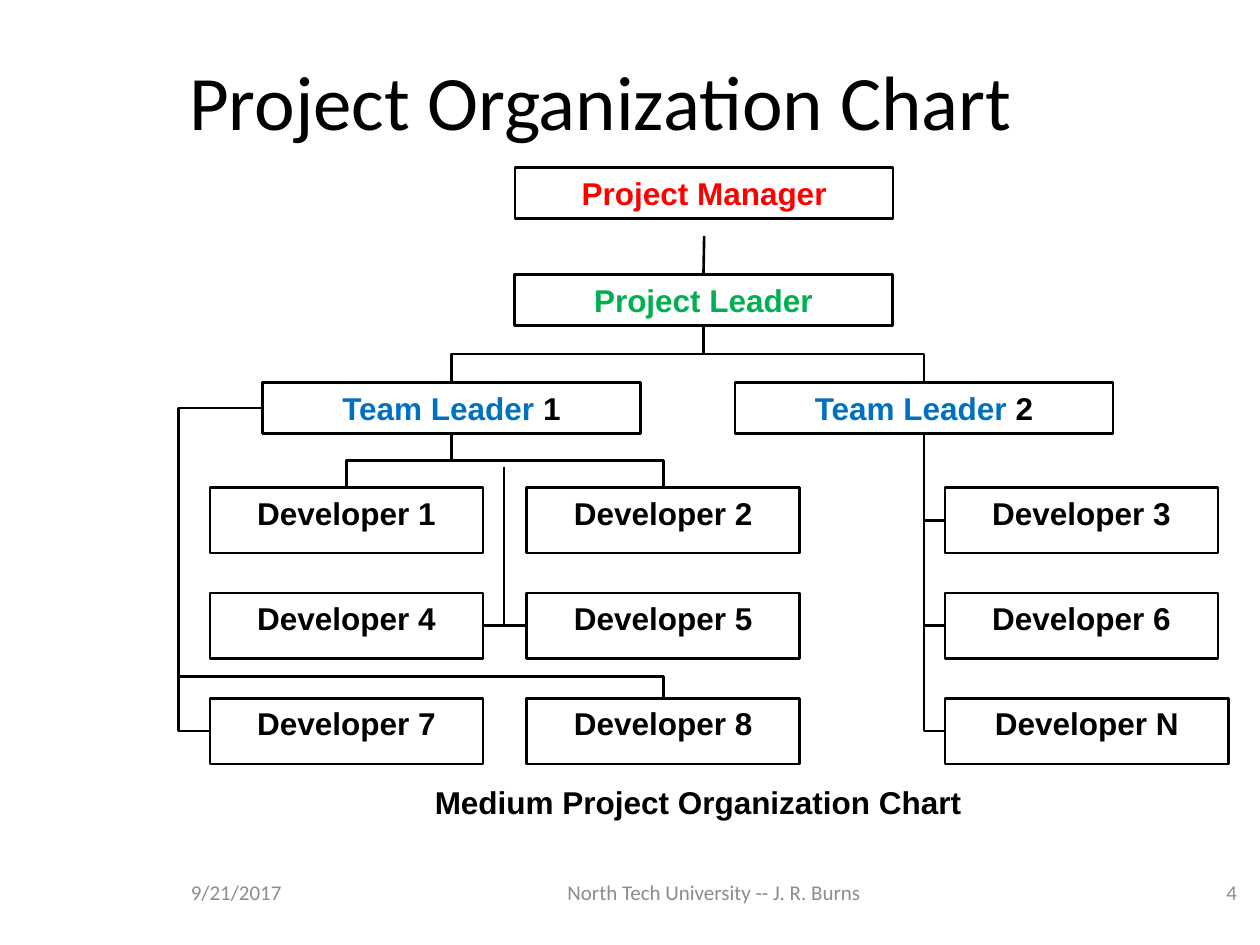
"""Build a slide with the organization chart of a medium project."""
import pptx
import pptx.chart.data
import pptx.dml.color
import pptx.enum.shapes
import pptx.enum.text
import pptx.oxml
import pptx.oxml.ns
import pptx.util
from lxml import etree

Pt = pptx.util.Pt
qn = pptx.oxml.ns.qn
Align = pptx.enum.text.PP_ALIGN
Anchor = pptx.enum.text.MSO_ANCHOR
Link = pptx.enum.shapes.MSO_CONNECTOR
Rect = pptx.enum.shapes.MSO_SHAPE.RECTANGLE
left, mid, right = Align.LEFT, Align.CENTER, Align.RIGHT
black, red, green, blue, gray = "000000", "FF0000", "00B050", "0070C0", "8C8C8C"
bold = {"name": "Arial", "size": Pt(18), "bold": True}
small = {"name": "Calibri", "size": Pt(12)}
large = {"name": "Calibri", "size": Pt(44)}

deck = pptx.Presentation()
deck.slide_width, deck.slide_height = Pt(720), Pt(540)
shapes = deck.slides.add_slide(deck.slide_layouts[6]).shapes


def color(code):
    return pptx.dml.color.RGBColor.from_string(code)


def write(shape, runs, style, align, anchor):
    frame = shape.text_frame
    frame.word_wrap = True
    frame.vertical_anchor = anchor
    para = frame.paragraphs[0]
    para.alignment = align
    for text, code in runs:
        run = para.add_run()
        run.text = text
        run.font.color.rgb = color(code)
        for key, value in style.items():
            setattr(run.font, key, value)


labels = [
    ("9/21/2017", (102, 492, 150, 36), small, gray, left, Anchor.MIDDLE),
    ("North Tech University -- J. R. Burns", (294, 492, 228, 36), small, gray, mid, Anchor.MIDDLE),
    ("4", (564, 492, 150, 36), small, gray, right, Anchor.MIDDLE),
    ("Project Organization Chart", (101, 12, 606, 90), large, black, left, Anchor.MIDDLE),
    ("Medium Project Organization Chart", (186, 444, 426, 36), bold, black, mid, Anchor.TOP),
]
for text, area, style, code, align, anchor in labels:
    label = shapes.add_textbox(*map(Pt, area))
    write(label, [(text, code)], style, align, anchor)

cols, top, step, wide, high = (120, 301, 540), 278.6, 60.2, 156, 37.5
boxes = [
    ([("Project Manager", red)], (294.4, 95.8, 216, 29)),
    ([("Project Leader", green)], (294, 157, 216, 29)),
    ([("Team Leader ", blue), ("1", black)], (150, 218.6, 216, 29)),
    ([("Team Leader ", blue), ("2", black)], (420, 218.6, 216, 29)),
]
for num in range(9):
    row, col = divmod(num, 3)
    last = num == 8
    name = "Developer N" if last else f"Developer {num + 1}"
    area = (cols[col], top + row * step, 162 if last else wide, high)
    boxes.append(([(name, black)], area))

drawn = []
for runs, area in boxes:
    box = shapes.add_shape(Rect, *map(Pt, area))
    box.shadow.inherit = False
    box.fill.background()
    box.line.color.rgb = color(black)
    box.line.width = Pt(1.5)
    write(box, runs, bold, mid, Anchor.TOP)
    drawn.append(box)

rows = [top + row * step + high / 2 for row in range(3)]
lead, one, two = (402, 186), (258, 247.6), (528, 247.6)
split = (288, 266.6)
down, side = True, False
links = [
    (lead, (258, 218.6), "bentConnector3", down, None),
    (lead, (528, 218.6), "bentConnector3", down, None),
    (one, (198, top), "bentConnector3", down, None),
    (one, (379, top), "bentConnector3", down, None),
    (split, (276, rows[1]), "bentConnector2", down, None),
    (split, (301, rows[1]), "bentConnector2", down, None),
    ((150, 233.1), (120, rows[2]), "bentConnector3", side, 160000),
    ((102, 386.6), (379, top + 2 * step), "bentConnector2", side, None),
]
links += [(two, (540, y), "bentConnector2", down, None) for y in rows]

lines = [shapes.add_connector(Link.STRAIGHT, Pt(402.4), Pt(134.8), Pt(402), Pt(157))]
lines[0].end_connect(drawn[1], 0)
for (x1, y1), (x2, y2), kind, turn, bend in links:
    ends = (x1, y1, x2, y2)
    if turn:
        midx, midy = (x1 + x2) / 2, (y1 + y2) / 2
        halfx, halfy = (y2 - y1) / 2, abs(x2 - x1) / 2
        ends = (midx - halfx, midy - halfy, midx + halfx, midy + halfy)
    line = shapes.add_connector(Link.ELBOW, *map(Pt, ends))
    props = line._element.spPr
    if turn:
        frame = props.find(qn("a:xfrm"))
        frame.set("rot", str((90 if x2 < x1 else 270) * 60000))
        if x2 > x1:
            frame.set("flipH", "1")
    geom = props.find(qn("a:prstGeom"))
    geom.set("prst", kind)
    if bend:
        guides = geom.find(qn("a:avLst"))
        etree.SubElement(guides, qn("a:gd"), name="adj1", fmla=f"val {bend}")
    lines.append(line)

for line in lines:
    line.line.color.rgb = color(black)
    line.line.width = Pt(1.5)
    etree.SubElement(line._element.spPr, qn("a:effectLst"))

deck.save("out.pptx")
